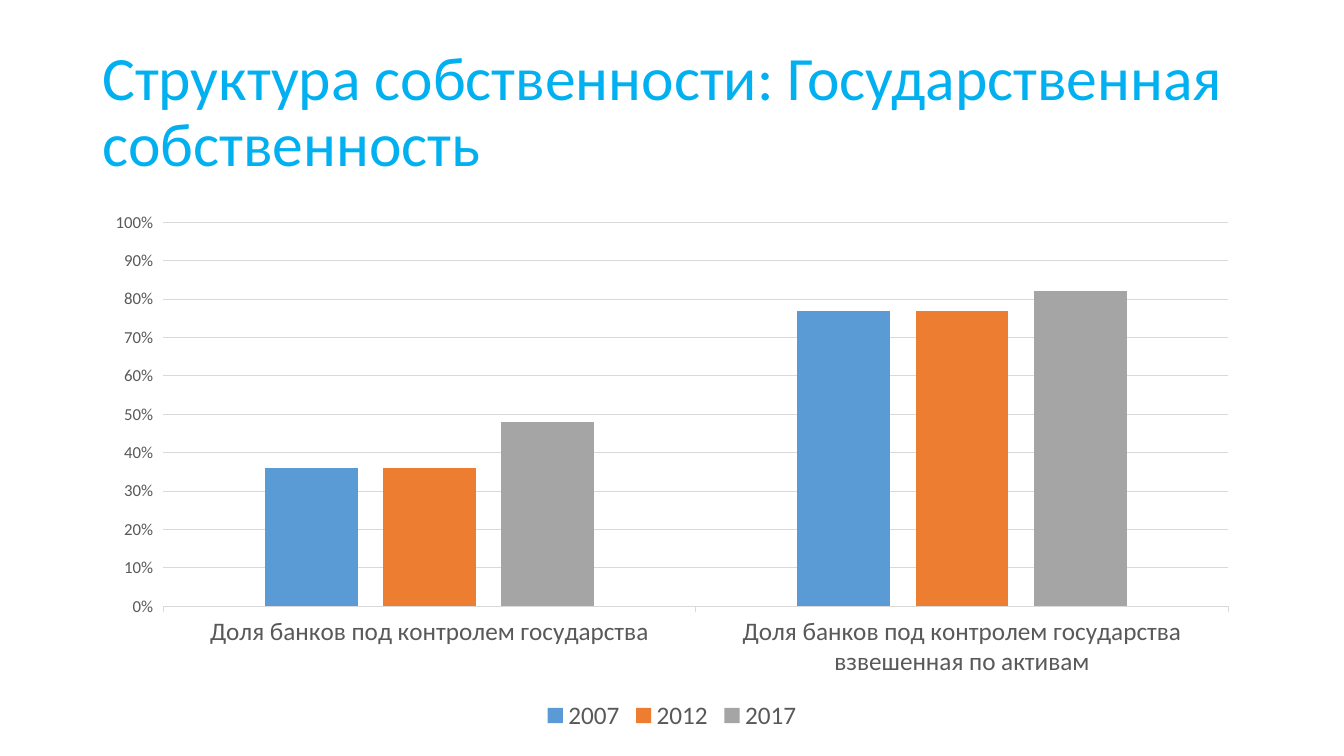
import pptx
import pptx.util
import pptx.chart.data
import pptx.dml.color
import pptx.enum.chart
import pptx.enum.text

Pt = pptx.util.Pt

# Content
FONT = "Calibri"
TITLE = "Структура собственности: Государственная собственность"
CATEGORIES = [
    "Доля банков под контролем государства",
    "Доля банков под контролем государства взвешенная по активам",
]
SERIES = [
    ("2007", (0.36, 0.77), "5B9BD5"),
    ("2012", (0.36, 0.77), "ED7D31"),
    ("2017", (0.48, 0.82), "A5A5A5"),
]
TITLE_COLOR, LABEL_COLOR, LINE_COLOR = "00B0F0", "595959", "D9D9D9"

# Layout in points
LEFT, WIDTH = 66, 828
TITLE_TOP, TITLE_HEIGHT = 28.75, 104.4
CHART_TOP, CHART_HEIGHT = 144, 381.6


def color(value):
    return pptx.dml.color.RGBColor.from_string(value)


def set_font(font, size, value):
    font.name = FONT
    font.size = Pt(size)
    font.color.rgb = color(value)


def set_line(line):
    line.color.rgb = color(LINE_COLOR)
    line.width = Pt(0.75)


def add_title(page):
    box = page.shapes.add_textbox(Pt(LEFT), Pt(TITLE_TOP), Pt(WIDTH), Pt(TITLE_HEIGHT))
    frame = box.text_frame
    frame.word_wrap = True
    frame.vertical_anchor = pptx.enum.text.MSO_ANCHOR.MIDDLE
    para = frame.paragraphs[0]
    para.text = TITLE
    para.line_spacing = 0.9
    set_font(para.font, 44, TITLE_COLOR)


def add_ownership_chart(page):
    data = pptx.chart.data.CategoryChartData(number_format="0%")
    data.categories = CATEGORIES
    for name, values, _ in SERIES:
        data.add_series(name, values)
    chart = page.shapes.add_chart(
        pptx.enum.chart.XL_CHART_TYPE.COLUMN_CLUSTERED,
        Pt(LEFT), Pt(CHART_TOP), Pt(WIDTH), Pt(CHART_HEIGHT), data,
    ).chart
    chart.has_title = False
    set_font(chart.font, 10, "000000")

    # Columns
    plot = chart.plots[0]
    plot.gap_width = 219
    plot.overlap = -27
    plot.vary_by_categories = False
    for series, (_, _, fill) in zip(plot.series, SERIES):
        series.format.fill.solid()
        series.format.fill.fore_color.rgb = color(fill)

    # Axes
    set_font(chart.category_axis.tick_labels.font, 18, LABEL_COLOR)
    set_line(chart.category_axis.format.line)
    axis = chart.value_axis
    axis.minimum_scale = 0
    axis.maximum_scale = 1
    axis.major_unit = 0.1
    axis.format.line.fill.background()
    set_line(axis.major_gridlines.format.line)
    set_font(axis.tick_labels.font, 12, LABEL_COLOR)
    axis.tick_labels.number_format = "0%"
    axis.tick_labels.number_format_is_linked = False

    # Legend
    chart.has_legend = True
    chart.legend.position = pptx.enum.chart.XL_LEGEND_POSITION.BOTTOM
    chart.legend.include_in_layout = False
    set_font(chart.legend.font, 18, LABEL_COLOR)


def main():
    deck = pptx.Presentation()
    deck.slide_width, deck.slide_height = Pt(960), Pt(540)
    page = deck.slides.add_slide(deck.slide_layouts[6])
    add_title(page)
    add_ownership_chart(page)
    deck.save("out.pptx")


if __name__ == "__main__":
    main()
